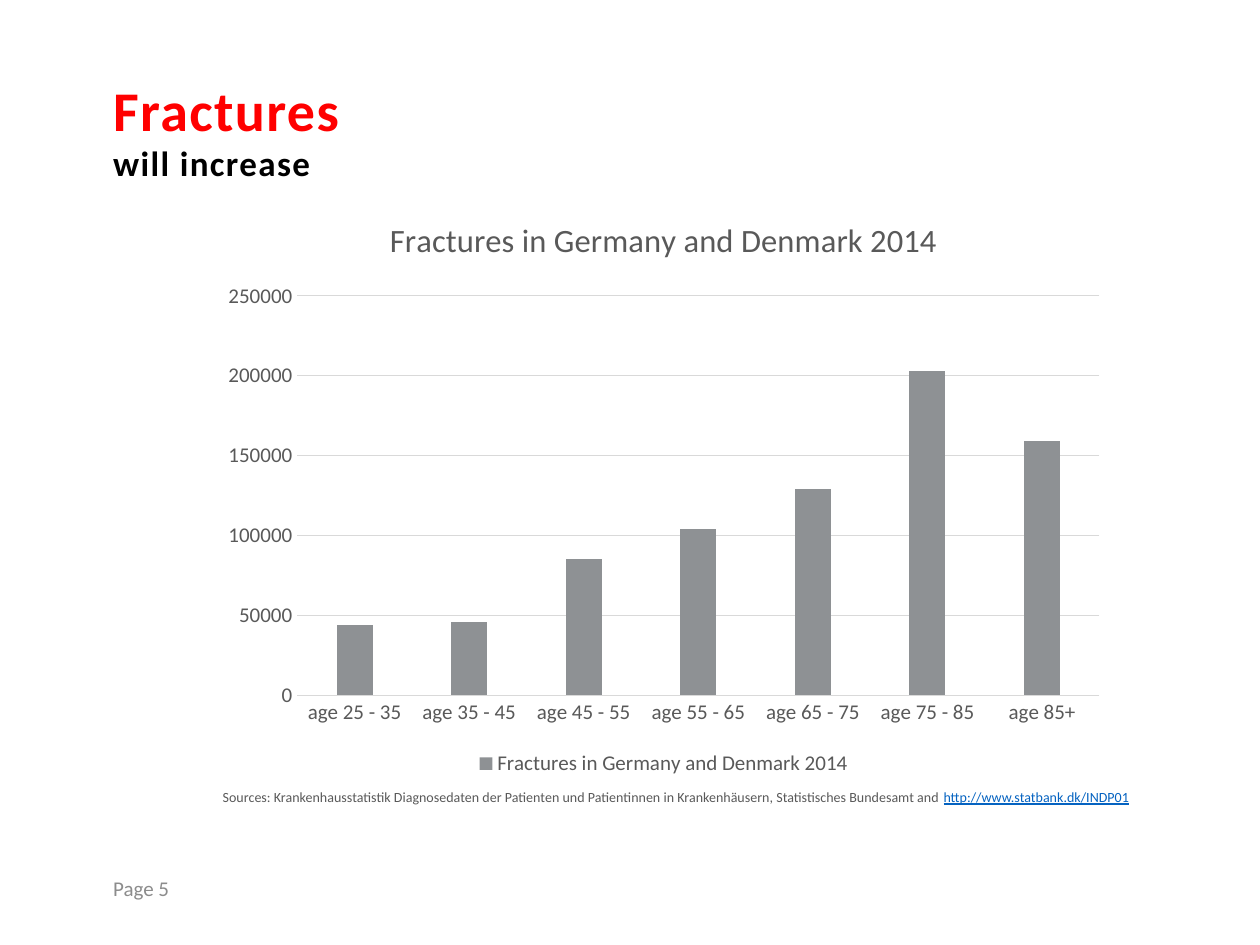
from lxml import etree
from pptx import Presentation
from pptx.chart.data import CategoryChartData
from pptx.dml.color import RGBColor
from pptx.enum.chart import XL_CHART_TYPE, XL_LEGEND_POSITION, XL_TICK_MARK
from pptx.enum.text import MSO_ANCHOR
from pptx.oxml.ns import qn
from pptx.util import Pt

COLUMNS = XL_CHART_TYPE.COLUMN_CLUSTERED
BOTTOM = XL_LEGEND_POSITION.BOTTOM
NO_TICK = XL_TICK_MARK.NONE
TOP, MIDDLE = MSO_ANCHOR.TOP, MSO_ANCHOR.MIDDLE

FONT = "Calibri"
COLORS = {
    "red": "FF0000",
    "black": "000000",
    "text": "595959",
    "link": "0563C1",
    "page": "8C8C8C",
    "grid": "D9D9D9",
    "bar": "8E9194",
}
CHART_TITLE = "Fractures in Germany and Denmark 2014"
FRACTURES = {
    "age 25 - 35": 44000,
    "age 35 - 45": 46000,
    "age 45 - 55": 85000,
    "age 55 - 65": 104000,
    "age 65 - 75": 129000,
    "age 75 - 85": 203000,
    "age 85+": 159000,
}
SOURCES = (
    "Sources: Krankenhausstatistik Diagnosedaten der Patienten und Patientinnen "
    "in Krankenhäusern, Statistisches Bundesamt and "
)


def rgb(name):
    """Return the named colour."""
    return RGBColor.from_string(COLORS[name])


def set_font(font, color, **values):
    """Apply the typeface, a colour and further format values to a font."""
    for key, value in {"name": FONT, **values}.items():
        setattr(font, key, value)
    font.color.rgb = rgb(color)


def add_text(s, box, runs, anchor=TOP, spacing=None, tracking=None):
    """Add a one-paragraph text box made of (text, colour, format) runs."""
    tf = s.shapes.add_textbox(*map(Pt, box)).text_frame
    tf.word_wrap = True
    tf.vertical_anchor = anchor
    p = tf.paragraphs[0]
    p.line_spacing = spacing
    for text, color, values in runs:
        r = p.add_run()
        r.text = text
        set_font(r.font, color, **values)
        if tracking:
            r._r.get_or_add_rPr().set("spc", str(tracking))


def add_heading(s, left, top, width):
    """Add the red headline with the black line below it."""
    lines = [("Fractures", "red", 32, 0, 35.5), ("will increase", "black", 20, 36, 27.5)]
    for text, color, size, offset, height in lines:
        runs = [(text, color, {"size": Pt(size), "bold": True})]
        add_text(s, (left, top + offset, width, height), runs, spacing=0.9, tracking=80)


def style_axis(axis):
    """Give an axis its label font and remove its tick marks."""
    axis.major_tick_mark = axis.minor_tick_mark = NO_TICK
    set_font(axis.tick_labels.font, "text", size=Pt(12))


def style_line(line):
    """Give a line the thin grid style."""
    line.color.rgb = rgb("grid")
    line.width = Pt(0.75)


def add_fracture_chart(s, left, top, width, height):
    """Add the column chart of fractures by age group."""
    data = CategoryChartData()
    data.categories = list(FRACTURES)
    data.add_series(CHART_TITLE, list(FRACTURES.values()))
    box = map(Pt, (left, top, width, height))
    chart = s.shapes.add_chart(COLUMNS, *box, data).chart
    set_font(chart.font, "black", size=Pt(10))

    p = chart.chart_title.text_frame.paragraphs[0]
    r = p.add_run()
    r.text = CHART_TITLE
    set_font(r.font, "text", size=Pt(18.6), bold=False)
    chart.chart_title.include_in_layout = False

    chart.has_legend = True
    chart.legend.position = BOTTOM
    chart.legend.include_in_layout = False
    set_font(chart.legend.font, "text", size=Pt(12))

    for axis in (chart.category_axis, chart.value_axis):
        style_axis(axis)
    style_line(chart.category_axis.format.line)
    style_line(chart.value_axis.major_gridlines.format.line)
    chart.value_axis.format.line.fill.background()

    plot = chart.plots[0]
    for key, value in {"gap_width": 219, "overlap": -27, "vary_by_categories": False}.items():
        setattr(plot, key, value)
    fill = plot.series[0].format.fill
    fill.solid()
    fill.fore_color.rgb = rgb("bar")
    etree.SubElement(plot.series[0].format.line._get_or_add_ln(), qn("a:noFill"))


def add_sources(s, left, top, width, height):
    """Add the small source line with its web address."""
    size = Pt(8)
    runs = [
        (SOURCES, "text", {"size": size}),
        ("http://www.statbank.dk/INDP01", "link", {"size": size, "underline": True}),
    ]
    add_text(s, (left, top, width, height), runs)


def add_page_number(s, left, top, width, height):
    """Add the page label at the foot of the slide."""
    runs = [("Page 5", "page", {"size": Pt(12)})]
    add_text(s, (left, top, width, height), runs, anchor=MIDDLE)


def main():
    """Build the slide and save it."""
    prs = Presentation()
    prs.slide_width, prs.slide_height = Pt(720), Pt(540)
    s = prs.slides.add_slide(prs.slide_layouts[6])
    margin, chart_left = 57.6, 120.2
    add_heading(s, margin, 44, 604)
    add_fracture_chart(s, chart_left, 110.2, 518.4, 336.2)
    add_sources(s, chart_left, 447.1, 542.2, 17.3)
    add_page_number(s, margin, 493.2, 162, 28.8)
    prs.save("out.pptx")


if __name__ == "__main__":
    main()
